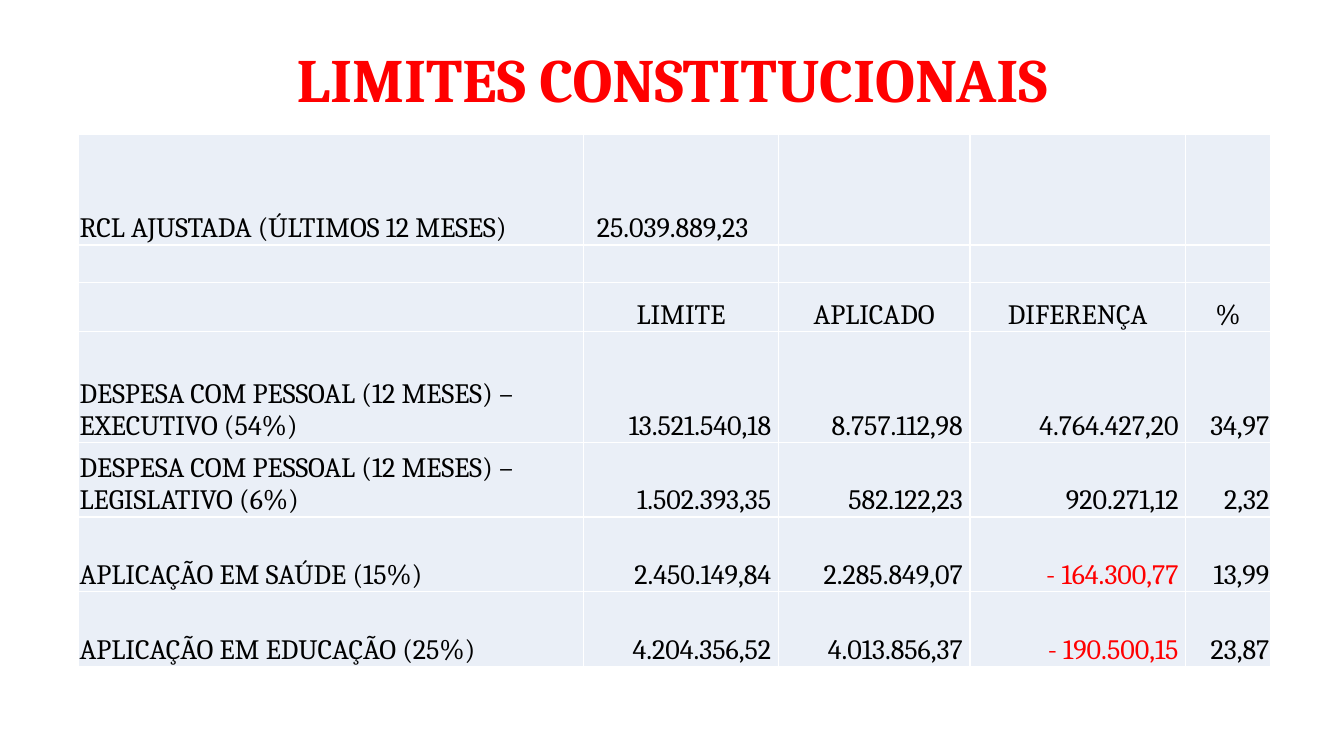
import pptx
import pptx.dml.color
import pptx.enum.text
import pptx.oxml
import pptx.oxml.ns
import pptx.util
from pptx.util import Inches

ALIGN = pptx.enum.text.PP_ALIGN
ANCHOR = pptx.enum.text.MSO_ANCHOR
FONT = "Cambria"
RED, BLACK, WHITE, CELL_FILL = "FF0000", "000000", "FFFFFF", "EAEFF7"
COLUMN_WIDTHS = [5.01, 1.93, 1.9, 2.14, 0.84]
ROW_HEIGHTS = [1.1, 0.37, 0.49, 1.1, 0.74, 0.74, 0.74]
RCL_ROW, HEADER_ROW = 0, 2
LABEL_COLUMN, PERCENT_COLUMN = 0, 4
LIMITS = [
    ["RCL AJUSTADA (ÚLTIMOS 12 MESES)", "25.039.889,23", "", "", ""],
    ["", "", "", "", ""],
    ["", "LIMITE", "APLICADO", "DIFERENÇA", "%"],
    ["DESPESA COM PESSOAL (12 MESES) – EXECUTIVO (54%)",
     "13.521.540,18", "8.757.112,98", "4.764.427,20", "34,97"],
    ["DESPESA COM PESSOAL (12 MESES) – LEGISLATIVO (6%)",
     "1.502.393,35", "582.122,23", "920.271,12", "2,32"],
    ["APLICAÇÃO EM SAÚDE (15%)",
     "2.450.149,84", "2.285.849,07", "- 164.300,77", "13,99"],
    ["APLICAÇÃO EM EDUCAÇÃO (25%)",
     "4.204.356,52", "4.013.856,37", "- 190.500,15", "23,87"],
]


def rgb(color):
    return pptx.dml.color.RGBColor.from_string(color)


def write_text(text_frame, text, size, color, alignment, bold=False):
    text_frame.text = text
    paragraph = text_frame.paragraphs[0]
    paragraph.alignment = alignment
    for run in paragraph.runs:
        run.font.name = FONT
        run.font.size = pptx.util.Pt(size)
        run.font.bold = bold
        run.font.color.rgb = rgb(color)


def add_title(slide, text):
    title = slide.shapes.add_textbox(
        Inches(0.92), Inches(0.4), Inches(11.5), Inches(0.83))
    text_frame = title.text_frame
    text_frame.word_wrap = True
    text_frame.vertical_anchor = ANCHOR.MIDDLE
    write_text(text_frame, text, 44, RED, ALIGN.CENTER, bold=True)
    text_frame.paragraphs[0].line_spacing = 0.9


def set_borders(cell, color, width):
    properties = cell._tc.get_or_add_tcPr()
    namespace = pptx.oxml.ns.nsdecls("a")
    for side in ("lnL", "lnR", "lnT", "lnB"):
        properties.append(pptx.oxml.parse_xml(
            f'<a:{side} {namespace} w="{pptx.util.Pt(width)}"><a:solidFill>'
            f'<a:srgbClr val="{color}"/></a:solidFill></a:{side}>'))


def cell_layout(row, column):
    """Return the alignment and the left and right margins of a cell."""
    if column == LABEL_COLUMN:
        return ALIGN.LEFT, 0.01, 0.01
    if row == RCL_ROW:
        return ALIGN.LEFT, 0.13, 0.01
    if row == HEADER_ROW:
        return ALIGN.CENTER, 0.01, 0.01
    return ALIGN.RIGHT, 0.01, 0.01 if column == PERCENT_COLUMN else 0.07


def fill_cell(cell, text, row, column):
    alignment, left, right = cell_layout(row, column)
    cell.margin_left, cell.margin_right = Inches(left), Inches(right)
    cell.margin_top, cell.margin_bottom = Inches(0.01), 0
    cell.vertical_anchor = ANCHOR.BOTTOM
    set_borders(cell, WHITE, 1)
    cell.fill.solid()
    cell.fill.fore_color.rgb = rgb(CELL_FILL)
    color = RED if text.startswith("-") else BLACK
    write_text(cell.text_frame, text, 20, color, alignment)


def add_limits_table(slide):
    table = slide.shapes.add_table(
        len(ROW_HEIGHTS), len(COLUMN_WIDTHS), Inches(0.78), Inches(1.33),
        Inches(sum(COLUMN_WIDTHS)), Inches(sum(ROW_HEIGHTS))).table
    table.first_row = False
    table.horz_banding = False
    for column, width in zip(table.columns, COLUMN_WIDTHS):
        column.width = Inches(width)
    for row, height in zip(table.rows, ROW_HEIGHTS):
        row.height = Inches(height)
    for row, texts in enumerate(LIMITS):
        for column, text in enumerate(texts):
            fill_cell(table.cell(row, column), text, row, column)


def main():
    presentation = pptx.Presentation()
    presentation.slide_width = Inches(13.33)
    presentation.slide_height = Inches(7.5)
    slide = presentation.slides.add_slide(presentation.slide_layouts[6])
    add_title(slide, "LIMITES CONSTITUCIONAIS")
    add_limits_table(slide)
    presentation.save("out.pptx")


if __name__ == "__main__":
    main()
